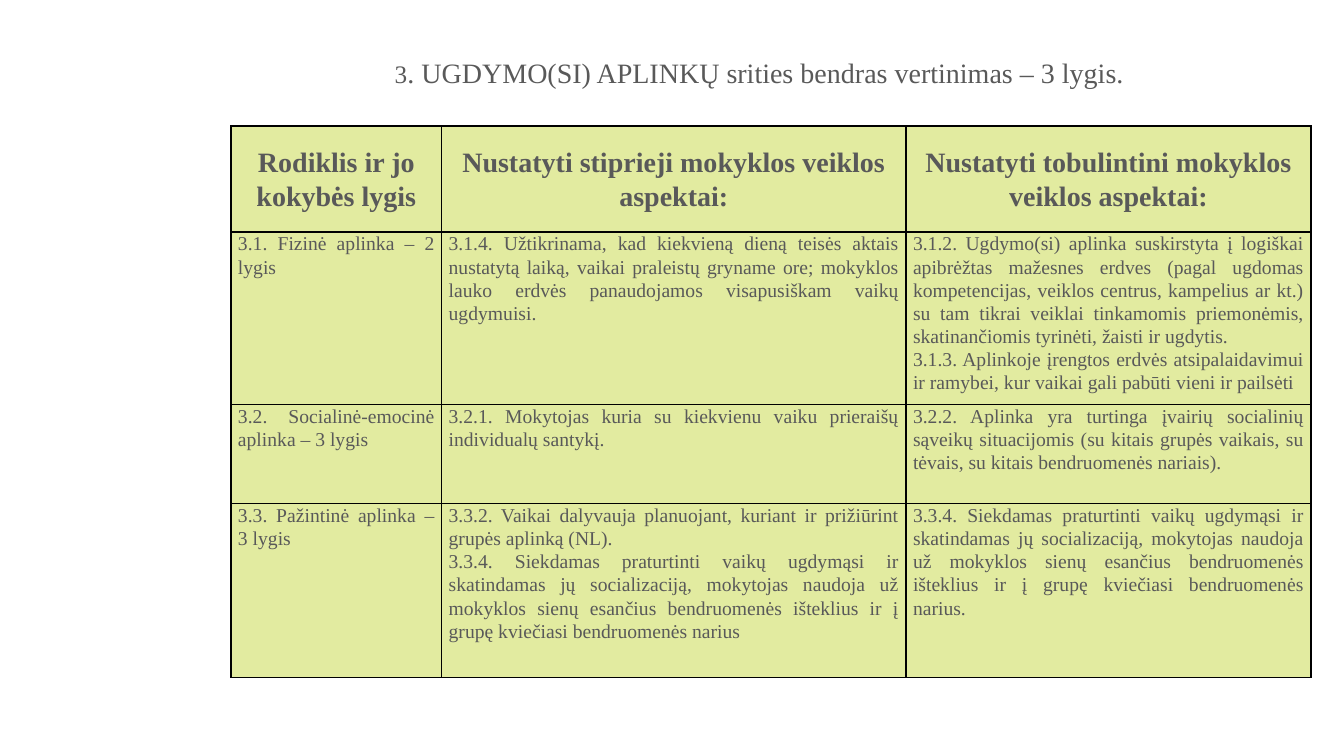
from lxml.etree import SubElement
from pptx import Presentation
from pptx.dml.color import RGBColor
from pptx.enum.text import MSO_ANCHOR, MSO_AUTO_SIZE, PP_ALIGN
from pptx.oxml.ns import qn
from pptx.util import Pt

TITLE = [("3", 18), (". UGDYMO(SI) APLINKŲ srities bendras vertinimas – 3 lygis.", 20)]
ROWS = [
    [
        ["Rodiklis ir jo kokybės lygis"],
        ["Nustatyti stiprieji mokyklos veiklos aspektai:"],
        ["Nustatyti tobulintini mokyklos veiklos aspektai:"],
    ],
    [
        ["3.1. Fizinė aplinka – 2 lygis"],
        ["3.1.4. Užtikrinama, kad kiekvieną dieną teisės aktais nustatytą laiką, vaikai "
         "praleistų gryname ore; mokyklos lauko erdvės panaudojamos visapusiškam vaikų ugdymuisi."],
        ["3.1.2. Ugdymo(si) aplinka suskirstyta į logiškai apibrėžtas mažesnes erdves (pagal "
         "ugdomas kompetencijas, veiklos centrus, kampelius ar kt.) su tam tikrai veiklai "
         "tinkamomis priemonėmis, skatinančiomis tyrinėti, žaisti ir ugdytis.",
         "3.1.3. Aplinkoje įrengtos erdvės atsipalaidavimui ir ramybei, kur vaikai gali "
         "pabūti vieni ir pailsėti"],
    ],
    [
        ["3.2. Socialinė-emocinė aplinka – 3 lygis"],
        ["3.2.1. Mokytojas kuria su kiekvienu vaiku prieraišų individualų santykį."],
        ["3.2.2. Aplinka yra turtinga įvairių socialinių sąveikų situacijomis (su kitais "
         "grupės vaikais, su tėvais, su kitais bendruomenės nariais)."],
    ],
    [
        ["3.3. Pažintinė aplinka – 3 lygis"],
        ["3.3.2. Vaikai dalyvauja planuojant, kuriant ir prižiūrint grupės aplinką (NL).",
         "3.3.4. Siekdamas praturtinti vaikų ugdymąsi ir skatindamas jų socializaciją, "
         "mokytojas naudoja už mokyklos sienų esančius bendruomenės išteklius ir į grupę "
         "kviečiasi bendruomenės narius"],
        ["3.3.4. Siekdamas praturtinti vaikų ugdymąsi ir skatindamas jų socializaciją, "
         "mokytojas naudoja už mokyklos sienų esančius bendruomenės išteklius ir į grupę "
         "kviečiasi bendruomenės narius."],
    ],
]
WIDTHS = [150.5, 331.7, 289.3]
HEIGHTS = [75.7, 123.2, 70.7, 124.6]
COLORS = {"text": "595959", "fill": "E2EBA0", "line": "000000"}
FONT = "Times New Roman"
HEAD = {"size": Pt(20), "bold": True, "name": FONT}
BODY = {"size": Pt(14), "bold": False, "name": FONT}
INSETS = {"margin_left": Pt(5), "margin_right": Pt(5), "margin_top": 0, "margin_bottom": 0}


def apply(item, values):
    for key, value in values.items():
        setattr(item, key, value)


def style(font, values):
    apply(font, values)
    font.color.rgb = RGBColor.from_string(COLORS["text"])


def border(cell):
    props = cell._tc.get_or_add_tcPr()
    for spot, side in enumerate(("lnL", "lnR", "lnT", "lnB")):
        line = SubElement(props, qn(f"a:{side}"), w=str(Pt(1)))
        fill = SubElement(line, qn("a:solidFill"))
        SubElement(fill, qn("a:srgbClr"), val=COLORS["line"])
        props.insert(spot, line)


def add_title(slide):
    title = slide.shapes.title
    apply(title, {"left": Pt(173.5), "top": Pt(23.8), "width": Pt(738), "height": Pt(65.5)})
    frame = title.text_frame
    apply(frame, {"word_wrap": True, "auto_size": MSO_AUTO_SIZE.NONE,
                  "vertical_anchor": MSO_ANCHOR.BOTTOM, "margin_bottom": Pt(25)})
    para = frame.paragraphs[0]
    apply(para, {"alignment": PP_ALIGN.CENTER, "line_spacing": 0.9})
    for text, size in TITLE:
        run = para.add_run()
        run.text = text
        style(run.font, {"size": Pt(size), "name": FONT})


def fill_cell(cell, lines, head):
    apply(cell, INSETS)
    cell.vertical_anchor = MSO_ANCHOR.MIDDLE if head else MSO_ANCHOR.TOP
    cell.fill.solid()
    cell.fill.fore_color.rgb = RGBColor.from_string(COLORS["fill"])
    border(cell)
    cell.text_frame.text = "\n".join(lines)
    for para in cell.text_frame.paragraphs:
        para.alignment = PP_ALIGN.CENTER if head else PP_ALIGN.JUSTIFY
        para.line_spacing = 1.07
        style(para.runs[0].font, HEAD if head else BODY)


def add_grid(slide):
    grid = slide.shapes.add_table(len(ROWS), len(WIDTHS), Pt(165), Pt(90),
                                  Pt(sum(WIDTHS)), Pt(sum(HEIGHTS))).table
    for col, width in zip(grid.columns, WIDTHS):
        col.width = Pt(width)
    for row, height in zip(grid.rows, HEIGHTS):
        row.height = Pt(height)
    for r, row in enumerate(ROWS):
        for c, lines in enumerate(row):
            fill_cell(grid.cell(r, c), lines, r == 0)


def main():
    deck = Presentation()
    apply(deck, {"slide_width": Pt(960), "slide_height": Pt(540)})
    slide = deck.slides.add_slide(deck.slide_layouts[5])
    add_title(slide)
    add_grid(slide)
    deck.save("out.pptx")


if __name__ == "__main__":
    main()
